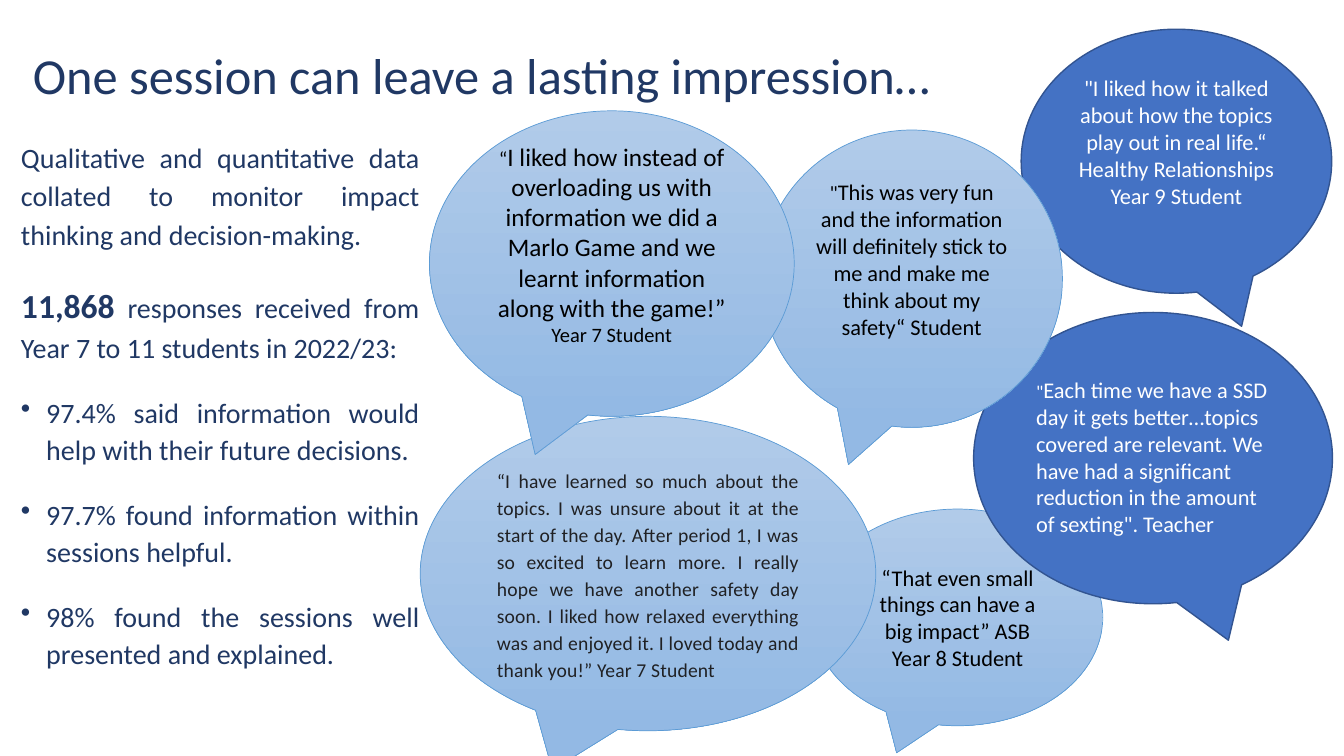
import pptx
import pptx.util
import pptx.dml.color
import pptx.enum.shapes
import pptx.enum.text
import pptx.oxml

Pt = pptx.util.Pt
ALIGN = pptx.enum.text.PP_ALIGN
ANCHOR = pptx.enum.text.MSO_ANCHOR
CALLOUT = pptx.enum.shapes.MSO_SHAPE.OVAL_CALLOUT

COLORS = {
    "navy": "203864",
    "black": "000000",
    "white": "FFFFFF",
    "charcoal": "202124",
    "royal": "4472C4",
    "royal_edge": "325491",
    "sky_top": "B1CBE9",
    "sky_bottom": "93B9E4",
    "sky_edge": "5B9BD5",
}
BULLET = ('<a:buChar xmlns:a="http://schemas.openxmlformats.org/'
          'drawingml/2006/main" char="•"/>')
LIFT = 28


def rgb(name):
    return pptx.dml.color.RGBColor.from_string(COLORS[name])


class ImpressionSlide:
    font = "Calibri"

    def __init__(self, deck):
        self.page = deck.slides.add_slide(deck.slide_layouts[6])

    def frame(self, shape, anchor):
        frame = shape.text_frame
        frame.word_wrap = True
        frame.vertical_anchor = anchor
        return frame

    def add_spans(self, para, runs, color, align, line=1.0, tracking=0):
        para.alignment = align
        para.line_spacing = line
        for text, size, bold in runs:
            span = para.add_run()
            span.text = text
            span.font.name = self.font
            span.font.size = Pt(size)
            span.font.bold = bold
            span.font.color.rgb = rgb(color)
            if tracking:
                span._r.get_or_add_rPr().set("spc", str(tracking))

    def title(self, area, text):
        box = self.page.shapes.add_textbox(*map(Pt, area))
        frame = self.frame(box, ANCHOR.BOTTOM)
        frame.margin_left = Pt(23.5)
        self.add_spans(frame.paragraphs[0], [(text, 36, False)], "navy",
                       ALIGN.LEFT, 0.9)

    def findings(self, area, intro, points):
        box = self.page.shapes.add_textbox(*map(Pt, area))
        frame = self.frame(box, ANCHOR.TOP)
        entries = [(runs, False) for runs in intro]
        entries += [([(text, 20, False)], True) for text in points]
        for index, (runs, bulleted) in enumerate(entries):
            para = frame.add_paragraph() if index else frame.paragraphs[0]
            if index:
                para.space_before = Pt(10)
            para.space_after = Pt(10)
            if bulleted:
                props = para._p.get_or_add_pPr()
                props.set("marL", str(Pt(18)))
                props.set("indent", str(-Pt(18)))
                props.append(pptx.oxml.parse_xml(BULLET))
            self.add_spans(para, runs, "navy", ALIGN.JUSTIFY,
                           1.1 if bulleted else 1.15)

    def bubble(self, area, runs, dark=False, color="black",
               align=ALIGN.CENTER, line=1.0, lift=0, tracking=0):
        shape = self.page.shapes.add_shape(CALLOUT, *map(Pt, area))
        shape.shadow.inherit = False
        shape.adjustments[0] = 0.21 if dark else -0.21
        if dark:
            shape.fill.solid()
            shape.fill.fore_color.rgb = rgb("royal")
        else:
            shape.fill.gradient()
            shape.fill.gradient_angle = 270
            for stop, name in zip(shape.fill.gradient_stops,
                                  ("sky_top", "sky_bottom")):
                stop.color.rgb = rgb(name)
        shape.line.color.rgb = rgb("royal_edge" if dark else "sky_edge")
        shape.line.width = Pt(1 if dark else 0.5)
        frame = self.frame(shape, ANCHOR.MIDDLE)
        frame.margin_bottom = Pt(3.6 + lift)
        self.add_spans(frame.paragraphs[0], runs, color, align, line,
                       tracking)


def main():
    deck = pptx.Presentation()
    deck.slide_width, deck.slide_height = Pt(960), Pt(540)
    slide = ImpressionSlide(deck)

    slide.title((0, 21.6, 904.3, 57.6),
                "One session can leave a lasting impression…")
    slide.findings(
        (7.9, 92.9, 298.8, 414.7),
        [[("Qualitative and quantitative data collated to monitor impact "
           "thinking and decision-making.", 20, False)],
         [("11,868", 24, True),
          (" responses received from Year 7 to 11 students in 2022/23:",
           20, False)]],
        ["97.4% said information would help with their future decisions.",
         "97.7% found information within sessions helpful.",
         "98% found the sessions well presented and explained."])

    slide.bubble(
        (580.3, 363.6, 207.4, 154.8),
        [("“That even small things can have a big impact” ASB Year 8 Student",
          16, False)])
    slide.bubble(
        (729.4, 20.9, 221.8, 188.6),
        [("\"I liked how it talked about how the topics play out in real "
          "life.“ Healthy Relationships Year 9 Student", 16, False)],
        dark=True, color="white", lift=LIFT)
    slide.bubble(
        (695.5, 223.2, 256.3, 208.1),
        [("\"", 13, False),
         ("Each time we have a SSD day it gets better…topics covered are "
          "relevant. We have had a significant reduction in the amount of "
          "sexting\". Teacher", 16, False)],
        dark=True, color="white", align=ALIGN.LEFT, lift=2)
    slide.bubble(
        (300.2, 297.4, 325.4, 224.6),
        [("“I have learned so much about the topics. I was unsure about it "
          "at the start of the day. After period 1, I was so excited to "
          "learn more. I really hope we have another safety day soon. I "
          "liked how relaxed everything was and enjoyed it. I loved today "
          "and thank you!” Year 7 Student", 14, False)],
        color="charcoal", align=ALIGN.JUSTIFY, line=1.15, tracking=10)
    slide.bubble(
        (543.6, 92.9, 215.3, 212.4),
        [("\"", 14.6, False),
         ("This was very fun and the information will definitely stick to "
          "me and make me think about my safety“ Student", 16, False)],
        lift=LIFT)
    slide.bubble(
        (306.7, 79.2, 260.6, 218.2),
        [("“", 14.6, False),
         ("I liked how instead of overloading us with information we did a "
          "Marlo Game and we learnt information along with the game!” ",
          18, False),
         ("Year 7 Student", 14.6, False)],
        lift=LIFT)

    deck.save("out.pptx")


if __name__ == "__main__":
    main()
